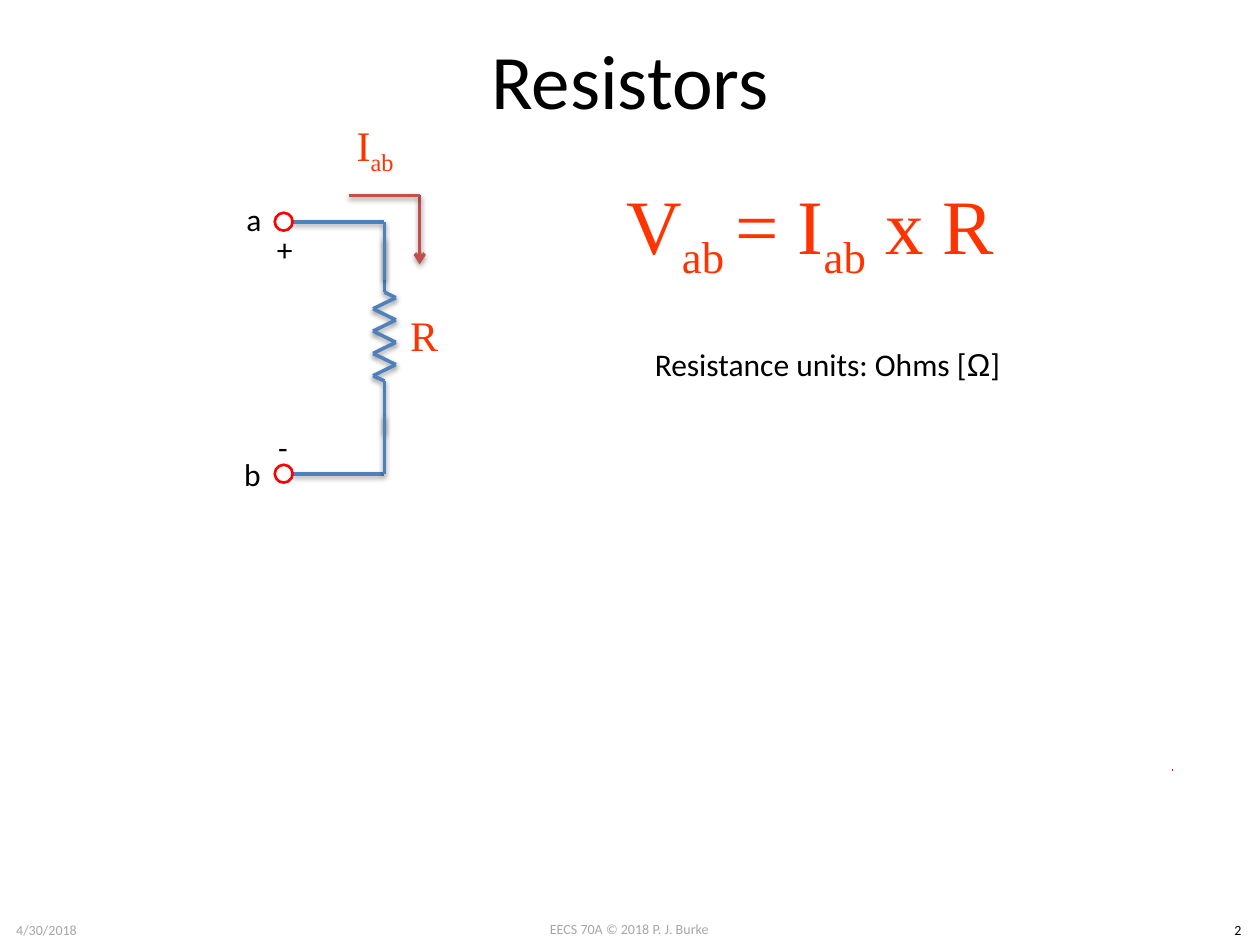
from lxml import etree
from pptx import Presentation
from pptx.dml.color import RGBColor
from pptx.enum.shapes import MSO_CONNECTOR, MSO_SHAPE
from pptx.enum.text import MSO_ANCHOR, MSO_AUTO_SIZE, PP_ALIGN
from pptx.oxml.ns import qn
from pptx.util import Cm, Pt

STRAIGHT = MSO_CONNECTOR.STRAIGHT
OVAL = MSO_SHAPE.OVAL
MIDDLE, TOP = MSO_ANCHOR.MIDDLE, MSO_ANCHOR.TOP
GROW = MSO_AUTO_SIZE.SHAPE_TO_FIT_TEXT
LEFT, CENTER = PP_ALIGN.LEFT, PP_ALIGN.CENTER

COLORS = {
    "ink": "000000",
    "footer": "A6A6A6",
    "formula": "FF3300",
    "wire": "4F81BD",
    "current": "C0504D",
    "terminal": "FF0000",
}
SANS, SERIF, SYMBOL = "Calibri", "Times New Roman", "Arial"
SUB = -25000


class SlideBuilder:
    def __init__(self, page):
        self.page = page

    def color(self, name):
        return RGBColor.from_string(COLORS[name])

    def add_spans(self, para, spans, size, font, color):
        for text, options in spans:
            span = para.add_run()
            span.text = text
            span.font.size = Pt(size)
            span.font.name = options.get("font", font)
            span.font.color.rgb = self.color(color)
            if "baseline" in options:
                span._r.get_or_add_rPr().set("baseline", str(options["baseline"]))

    def title(self, text, place):
        box = self.page.shapes.title
        box.left, box.top, box.width, box.height = map(Cm, place)
        box.text_frame.vertical_anchor = MIDDLE
        para = box.text_frame.paragraphs[0]
        para.alignment = CENTER
        self.add_spans(para, [(text, {})], 44, SANS, "ink")

    def text(self, spans, place, size=18, font=SANS, color="ink",
             align=LEFT, anchor=TOP, wrap=False):
        box = self.page.shapes.add_textbox(*map(Cm, place))
        frame = box.text_frame
        frame.word_wrap = wrap
        frame.vertical_anchor = anchor
        if anchor == TOP:
            frame.auto_size = GROW
        para = frame.paragraphs[0]
        para.alignment = align
        self.add_spans(para, spans, size, font, color)

    def footer(self, text, place, color="footer"):
        self.text([(text, {})], place, 8, color=color, align=CENTER, wrap=True)

    def formula(self, spans, place, size=24):
        self.text(spans, place, size, SERIF, "formula", CENTER, MIDDLE, True)

    def line(self, start, end, color="wire", arrow=False):
        wire = self.page.shapes.add_connector(STRAIGHT, *map(Cm, start + end))
        wire.line.color.rgb = self.color(color)
        wire.line.width = Pt(2)
        if arrow:
            etree.SubElement(wire.line._get_or_add_ln(), qn("a:tailEnd"), type="arrow")
        effects = etree.SubElement(wire._element.spPr, qn("a:effectLst"))
        shadow = etree.SubElement(effects, qn("a:outerShdw"), blurRad="40000",
                                  dist="20000", dir="5400000", rotWithShape="0")
        tint = etree.SubElement(shadow, qn("a:srgbClr"), val=COLORS["ink"])
        etree.SubElement(tint, qn("a:alpha"), val="38000")

    def polyline(self, points):
        for start, end in zip(points, points[1:]):
            self.line(start, end)

    def outline(self, shape):
        shape.shadow.inherit = False
        shape.fill.background()
        shape.line.color.rgb = self.color("terminal")
        shape.line.width = Pt(1.5)

    def terminal(self, x, y, size=0.36):
        place = (x - size / 2, y - size / 2, size, size)
        self.outline(self.page.shapes.add_shape(OVAL, *map(Cm, place)))

    def dot(self, x, y):
        builder = self.page.shapes.build_freeform(Cm(x), Cm(y))
        builder.add_line_segments([(Cm(x + 0.02), Cm(y))], close=False)
        self.outline(builder.convert_to_shape())


def main():
    deck = Presentation()
    deck.slide_width, deck.slide_height = Cm(25.4), Cm(19.05)
    slide = SlideBuilder(deck.slides.add_slide(deck.slide_layouts[5]))

    slide.footer("EECS 70A © 2018 P. J. Burke", (9.73, 18.44, 5.92, 0.61))
    slide.footer("4/30/2018", (0, 18.46, 1.88, 0.61))
    slide.footer("2", (24.51, 18.46, 0.89, 0.61), "ink")
    slide.title("Resistors", (1.27, 0, 22.86, 3.18))

    wire_x, terminal_x, half_width = 7.75, 5.72, 0.23
    top_y, bottom_y = 4.47, 9.55
    zigzag = [(wire_x + half_width * (-1) ** i, 6 + 0.225 * i) for i in range(8)]
    upper_lead = [(wire_x, y) for y in (4.8, 5.66, 5.89)]
    lower_lead = [(wire_x, y) for y in (7.68, 7.9, 8.74)]
    slide.polyline(upper_lead + zigzag + lower_lead)

    for corner_y, lead_y in ((top_y, 5.64), (bottom_y, 8.38)):
        slide.polyline([(terminal_x + 0.18, corner_y), (wire_x, corner_y), (wire_x, lead_y)])
        slide.terminal(terminal_x, corner_y)

    for label, place in (
        ("a", (4.72, 3.91, 0.81, 1.02)),
        ("b", (4.67, 9.04, 0.86, 1.02)),
        ("+", (5.33, 4.52, 0.84, 1.02)),
        ("-", (5.36, 8.51, 0.71, 1.02)),
    ):
        slide.text([(label, {})], place)

    slide.line((8.46, 3.94), (8.46, 5.33), "current", arrow=True)
    slide.line((7.04, 3.94), (8.46, 3.94), "current")

    sub = {"baseline": SUB}
    slide.formula([("I", {}), ("ab", sub)], (6.05, 2.06, 3.02, 1.85))
    slide.formula([("V", {}), ("ab ", sub), ("= I", {}), ("ab", sub), (" x R ", {})],
                  (10.8, 3.35, 11.46, 2.57), 44)
    slide.text([("Resistance units: Ohms [", {}), ("Ω", {"font": SYMBOL}), ("]", {})],
               (12.95, 6.83, 7.57, 1.02))
    slide.formula([("R", {})], (7.04, 5.82, 3.02, 1.85))
    slide.dot(23.62, 15.52)

    deck.save("out.pptx")


if __name__ == "__main__":
    main()
